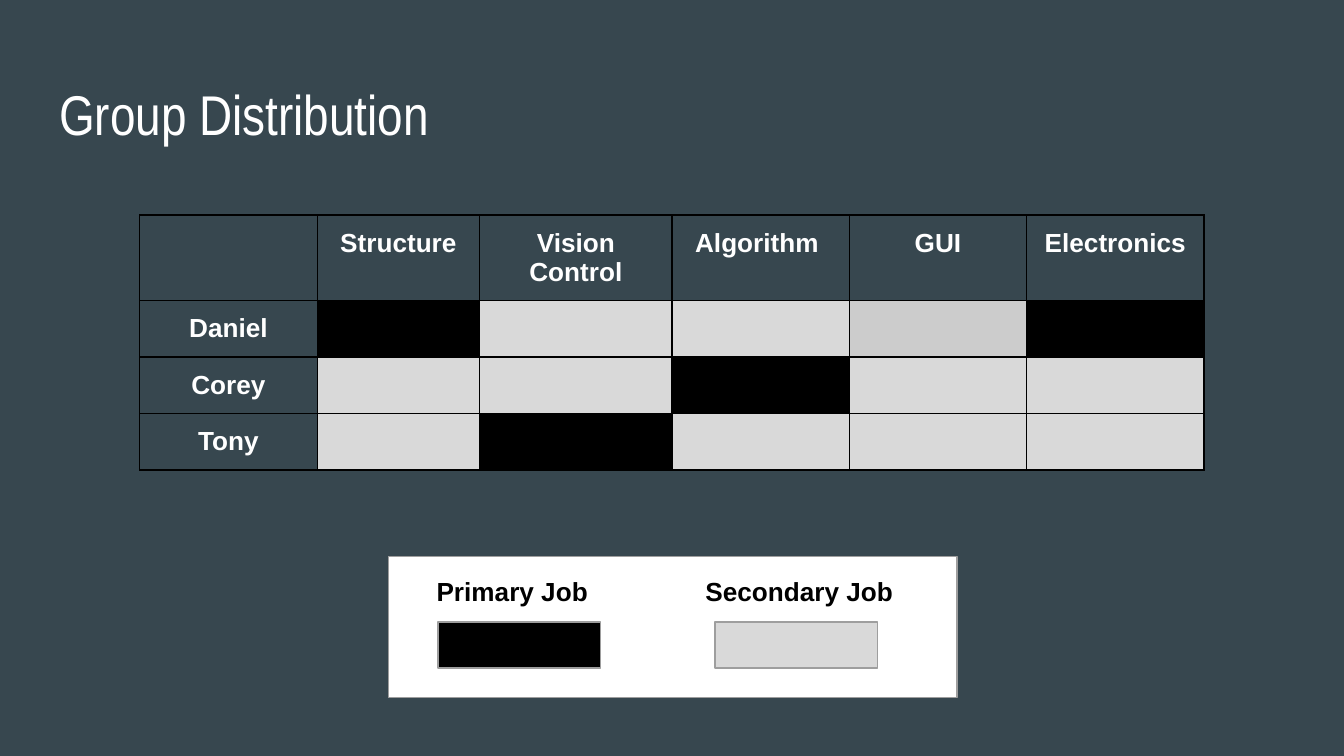
import pptx
import pptx.util
import pptx.dml.color
import pptx.enum.shapes
import pptx.enum.text
import pptx.oxml
import pptx.oxml.ns
from lxml import etree

Inches = pptx.util.Inches
Pt = pptx.util.Pt
RGB = pptx.dml.color.RGBColor.from_string
PP_ALIGN = pptx.enum.text.PP_ALIGN
qn = pptx.oxml.ns.qn

THEME = {
    "background": "37474F", "light": "FFFFFF", "primary": "000000",
    "secondary": "D9D9D9", "secondary_alt": "CCCCCC", "outline": "9E9E9E",
    "title_font": "Arial Narrow", "body_font": "Arial",
    "title_size": 30, "body_size": 14, "line": 0.75,
}


def format_text(tf, font, size, color, bold=False, align=PP_ALIGN.LEFT):
    tf.word_wrap = True
    tf.vertical_anchor = pptx.enum.text.MSO_ANCHOR.TOP
    tf.margin_left = tf.margin_right = Inches(0.1)
    tf.margin_top = tf.margin_bottom = Inches(0.1)
    p = tf.paragraphs[0]
    p.alignment = align
    p.font.name = THEME[font]
    p.font.size = Pt(THEME[size])
    p.font.bold = bold
    p.font.color.rgb = RGB(THEME[color])


def add_box(s, left, top, width, height, fill):
    sp = s.shapes.add_shape(pptx.enum.shapes.MSO_SHAPE.RECTANGLE,
                            Inches(left), Inches(top), Inches(width), Inches(height))
    sp.shadow.inherit = False
    sp.fill.solid()
    sp.fill.fore_color.rgb = RGB(THEME[fill])
    sp.line.color.rgb = RGB(THEME["outline"])
    sp.line.width = Pt(THEME["line"])


prs = pptx.Presentation()
prs.slide_width = Inches(10)
prs.slide_height = Inches(10 * 9 / 16)
s = prs.slides.add_slide(prs.slide_layouts[5])
s.background.fill.solid()
s.background.fill.fore_color.rgb = RGB(THEME["background"])

title = s.shapes.title
title.left, title.top = Inches(0.34), Inches(0.49)
title.width, title.height = Inches(9.32), Inches(0.63)
title.text_frame.text = "Group Distribution"
format_text(title.text_frame, "title_font", "title_size", "light")

jobs = ["", "Structure", "Vision Control", "Algorithm ", "GUI", "Electronics"]
members = [
    ("Daniel", ["primary", "secondary", "secondary", "secondary_alt", "primary"]),
    ("Corey", ["secondary", "secondary", "primary", "secondary", "secondary"]),
    ("Tony", ["secondary", "primary", "secondary", "secondary", "secondary"]),
]
col_widths = [1.32, 1.21, 1.43, 1.32, 1.32, 1.32]
row_heights = [0.63, 0.42, 0.42, 0.42]

frame = s.shapes.add_table(len(row_heights), len(col_widths), Inches(1.04), Inches(1.6),
                           Inches(sum(col_widths)), Inches(sum(row_heights)))
table = frame.table
table.first_row = table.horz_banding = False
for column, width in zip(table.columns, col_widths):
    column.width = Inches(width)
for row, height in zip(table.rows, row_heights):
    row.height = Inches(height)

labels = {(0, c): job for c, job in enumerate(jobs) if job}
fills = {}
for r, (member, levels) in enumerate(members, 1):
    labels[r, 0] = member
    for c, level in enumerate(levels, 1):
        fills[r, c] = level

for r in range(len(row_heights)):
    for c in range(len(col_widths)):
        cell = table.cell(r, c)
        if (r, c) in labels:
            cell.text = labels[r, c]
            cell.margin_top = cell.margin_bottom = Inches(0.1)
            cell.margin_left = cell.margin_right = Inches(0.1)
            p = cell.text_frame.paragraphs[0]
            p.alignment = PP_ALIGN.CENTER
            p.font.name = THEME["body_font"]
            p.font.size = Pt(THEME["body_size"])
            p.font.bold = True
            p.font.color.rgb = RGB(THEME["light"])
        tcPr = cell._tc.get_or_add_tcPr()
        for side in ("a:lnL", "a:lnR", "a:lnT", "a:lnB"):
            ln = etree.SubElement(tcPr, qn(side), w=str(Pt(THEME["line"])))
            solid = etree.SubElement(ln, qn("a:solidFill"))
            etree.SubElement(solid, qn("a:srgbClr"), val=THEME["primary"])
        if (r, c) in fills:
            cell.fill.solid()
            cell.fill.fore_color.rgb = RGB(THEME[fills[r, c]])
        else:
            cell.fill.background()

add_box(s, 2.89, 4.14, 4.23, 1.05, "light")
legend = s.shapes.add_textbox(Inches(3.15), Inches(4.18), Inches(3.73), Inches(0.79))
legend.text_frame.text = "Primary Job\tSecondary Job"
format_text(legend.text_frame, "body_font", "body_size", "primary", bold=True)
pPr = legend.text_frame.paragraphs[0]._p.get_or_add_pPr()
tabs = pptx.oxml.parse_xml(
    '<a:tabLst xmlns:a="http://schemas.openxmlformats.org/drawingml/2006/main">'
    f'<a:tab pos="{Inches(2)}" algn="l"/></a:tabLst>')
pPr.find(qn("a:defRPr")).addprevious(tabs)
for left, level in ((3.26, "primary"), (5.32, "secondary")):
    add_box(s, left, 4.63, 1.21, 0.34, level)

prs.save("out.pptx")
